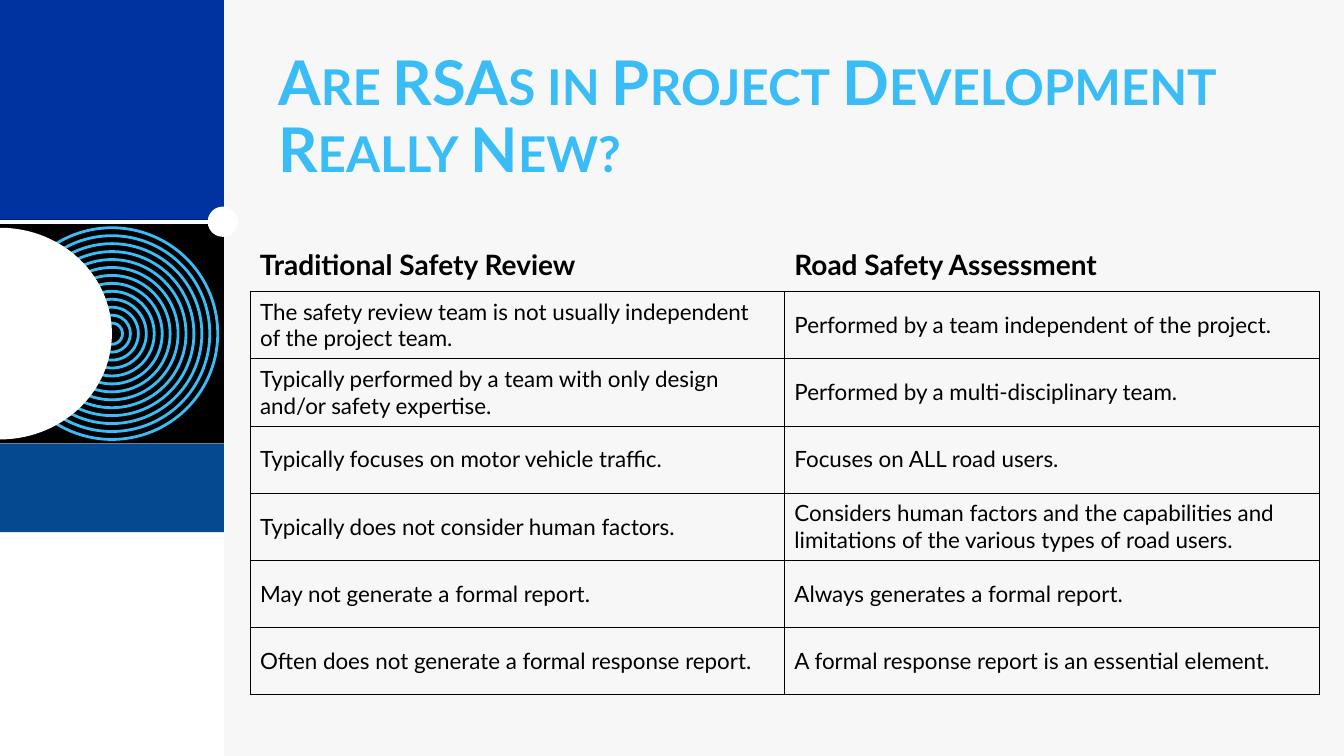
from math import cos, pi, sin
from lxml.etree import SubElement as Sub
from pptx import Presentation
from pptx.dml.color import RGBColor
from pptx.enum.shapes import MSO_CONNECTOR as Conn, MSO_SHAPE as Kind
from pptx.enum.text import MSO_ANCHOR as Anchor
from pptx.oxml.ns import qn
from pptx.util import Inches, Pt

TITLE = "Are RSAs in Project Development Really New?"
HEADS = ["Traditional Safety Review", "Road Safety Assessment"]
ROWS = [
    ("The safety review team is not usually independent of the project team.",
     "Performed by a team independent of the project."),
    ("Typically performed by a team with only design and/or safety expertise.",
     "Performed by a multi-disciplinary team."),
    ("Typically focuses on motor vehicle traffic.",
     "Focuses on ALL road users."),
    ("Typically does not consider human factors.",
     "Considers human factors and the capabilities and limitations of the various types of road users."),
    ("May not generate a formal report.",
     "Always generates a formal report."),
    ("Often does not generate a formal response report.",
     "A formal response report is an essential element."),
]
FONT = "Lato"
SKY, BLACK, WHITE, PALE = "3ABCF6", "000000", "FFFFFF", "F7F7F7"
WIDE, HIGH = 13.33, 7.5
SIDE = 2.22
PANELS = [
    (0, SIDE, "0033A0"),
    (5.28, SIDE, WHITE),
    (2.18, SIDE, BLACK),
    (4.4, 0.88, "034A90"),
]
MID_X, MID_Y = SIDE / 2, 3.31
RINGS, OUTER, INNER = 13, 2.1, 0.21
LEFT, TOP, COL, ROW = 2.48, 2.89, 5.3, 4 / 6
HEAD = 0.5


def color(code):
    return RGBColor.from_string(code)


def shape(kind, x, y, w, h, fill=None, line=None):
    item = slide.shapes.add_shape(kind, *map(Inches, (x, y, w, h)))
    paint(item, fill, line)


def paint(item, fill, line=None):
    item.shadow.inherit = False
    if fill:
        item.fill.solid()
        item.fill.fore_color.rgb = color(fill)
    else:
        item.fill.background()
    if line:
        item.line.color.rgb = color(line)
        item.line.width = Pt(2)
    else:
        item.line.fill.background()


def write(frame, text, size, tint, bold=False):
    frame.word_wrap = True
    para = frame.paragraphs[0]
    run = para.add_run()
    run.text = text
    font = para.font
    font.name, font.size, font.bold = FONT, Pt(size), bold
    font.color.rgb = color(tint)
    return para, run


def label(x, y, w, h, text, size, tint, anchor):
    frame = slide.shapes.add_textbox(*map(Inches, (x, y, w, h))).text_frame
    frame.vertical_anchor = anchor
    para, run = write(frame, text, size, tint, True)
    para.line_spacing = 0.9
    return run


def border(cell):
    props = cell._tc.get_or_add_tcPr()
    for spot, side in enumerate(("lnL", "lnR", "lnT", "lnB")):
        edge = props.makeelement(qn("a:" + side), {"w": str(Pt(0.25))})
        fill = Sub(edge, qn("a:solidFill"))
        Sub(fill, qn("a:srgbClr"), val=BLACK)
        props.insert(spot, edge)


deck = Presentation()
deck.slide_width, deck.slide_height = Inches(WIDE), Inches(HIGH)
slide = deck.slides.add_slide(deck.slide_layouts[6])
slide.background.fill.solid()
slide.background.fill.fore_color.rgb = color(PALE)

for y, h, fill in PANELS:
    shape(Kind.RECTANGLE, 0, y, SIDE, h, fill)

for i in range(RINGS):
    size = OUTER - i * (OUTER - INNER) / (RINGS - 1)
    shape(Kind.OVAL, MID_X - size / 2, MID_Y - size / 2, size, size, line=SKY)

turns = [pi * i / 60 - pi / 2 for i in range(61)]
curve = [(Inches(MID_X * cos(t)), Inches(MID_Y + OUTER / 2 * sin(t))) for t in turns]
form = slide.shapes.build_freeform(*curve[0])
form.add_line_segments(curve[1:], close=True)
paint(form.convert_to_shape(), WHITE)

rule = slide.shapes.add_connector(Conn.STRAIGHT, 0, Inches(2.2), Inches(2.36), Inches(2.2))
rule.line.color.rgb = color(WHITE)
rule.line.width = Pt(3)
Sub(rule._element.spPr, qn("a:effectLst"))
shape(Kind.OVAL, 2.06, 2.05, 0.3, 0.3, WHITE)

run = label(2.66, 0.47, 10.12, 1.45, TITLE, 44, SKY, Anchor.TOP)
run._r.get_or_add_rPr().set("cap", "small")
for c, head in enumerate(HEADS):
    label(LEFT + c * COL, TOP - HEAD, 5, HEAD, head, 20, BLACK, Anchor.MIDDLE)

spot = map(Inches, (LEFT, TOP, COL * len(HEADS), ROW * len(ROWS)))
table = slide.shapes.add_table(len(ROWS), len(HEADS), *spot).table
table.first_row = table.horz_banding = False
for r, row in enumerate(ROWS):
    for c, text in enumerate(row):
        cell = table.cell(r, c)
        cell.vertical_anchor = Anchor.MIDDLE
        cell.fill.background()
        border(cell)
        write(cell.text_frame, text, 16, BLACK)

deck.save("out.pptx")
